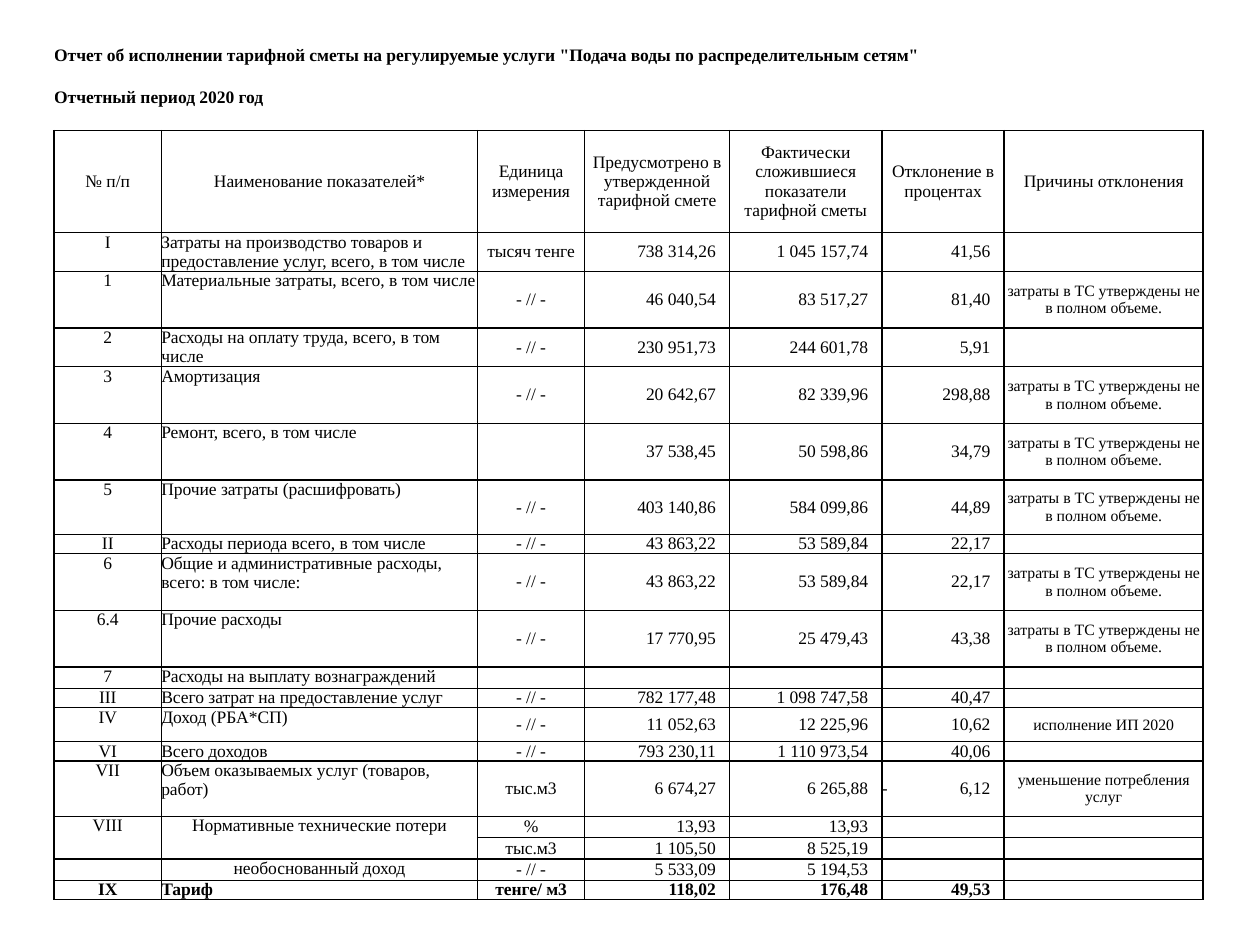
from lxml import etree
from pptx import Presentation
from pptx import util as u
from pptx.dml.color import RGBColor
from pptx.enum import text
from pptx.oxml import ns

BLACK = RGBColor(0x00, 0x00, 0x00)
WHITE = RGBColor(0xFF, 0xFF, 0xFF)
LEFT, MID, RIGHT = text.PP_ALIGN.LEFT, text.PP_ALIGN.CENTER, text.PP_ALIGN.RIGHT

COLS = [0.85, 2.51, 0.85, 1.15, 1.21, 0.97, 1.58]
ROWS = [0.16, 0.16, 0.18, 0.15, 0.81, 0.3, 0.45, 0.3, 0.45, 0.45, 0.43, 0.15,
        0.45, 0.45, 0.15, 0.15, 0.27, 0.15, 0.44, 0.15, 0.15, 0.15, 0.15]
HEAD = 4  # row of the column headings
LOSS = 19  # first of the two rows on losses
FINAL = len(ROWS) - 1

TITLE = 'Отчет об исполнении тарифной сметы на регулируемые услуги "Подача воды по распределительным сетям"'
PERIOD = "Отчетный период 2020 год"
SAME = "- // -"
LOW = "затраты в ТС утверждены не в полном объеме."

DATA = [
    ("№ п/п", "Наименование показателей*", "Единица измерения",
     "Предусмотрено в утвержденной тарифной смете",
     "Фактически сложившиеся показатели тарифной сметы",
     "Отклонение в процентах", "Причины отклонения"),
    ("I", "Затраты на производство товаров и предоставление услуг, всего, в том числе",
     "тысяч тенге", "738 314,26", "1 045 157,74", "41,56", ""),
    ("1", "Материальные затраты, всего, в том числе", SAME, "46 040,54", "83 517,27", "81,40", LOW),
    ("2", "Расходы на оплату труда, всего, в том числе", SAME, "230 951,73", "244 601,78", "5,91", ""),
    ("3", "Амортизация", SAME, "20 642,67", "82 339,96", "298,88", LOW),
    ("4", "Ремонт, всего, в том числе", "", "37 538,45", "50 598,86", "34,79", LOW),
    ("5", "Прочие затраты (расшифровать)", SAME, "403 140,86", "584 099,86", "44,89", LOW),
    ("II", "Расходы периода всего, в том числе", SAME, "43 863,22", "53 589,84", "22,17", ""),
    ("6", "Общие и административные расходы, всего: в том числе:", SAME,
     "43 863,22", "53 589,84", "22,17", LOW),
    ("6.4", "Прочие расходы", SAME, "17 770,95", "25 479,43", "43,38", LOW),
    ("7", "Расходы на выплату вознаграждений", "", "", "", "", ""),
    ("III", "Всего затрат на предоставление услуг", SAME, "782 177,48", "1 098 747,58", "40,47", ""),
    ("IV", "Доход (РБА*СП)", SAME, "11 052,63", "12 225,96", "10,62", "исполнение ИП 2020"),
    ("VI", "Всего доходов", SAME, "793 230,11", "1 110 973,54", "40,06", ""),
    ("VII", "Объем оказываемых услуг (товаров, работ)", "тыс.м3",
     "6 674,27", "6 265,88", "-\t6,12", "уменьшение потребления услуг"),
    ("VIII", "Нормативные технические потери", "%", "13,93", "13,93", "", ""),
    ("", "", "тыс.м3", "1 105,50", "8 525,19", "", ""),
    ("", "необоснованный доход", SAME, "5 533,09", "5 194,53", "", ""),
    ("IX", "Тариф", "тенге/ м3", "118,02", "176,48", "49,53", ""),
]


class Sheet:
    """Style of the report and the slide it is set on."""

    font = "Times New Roman"
    size = 10
    small = 9
    pad = 0.11

    def __init__(self, slide):
        self.slide = slide

    def table(self, left, top, cols, rows):
        frame = self.slide.shapes.add_table(
            len(rows), len(cols), u.Inches(left), u.Inches(top),
            u.Inches(sum(cols)), u.Inches(sum(rows)))
        grid = frame.table
        grid.first_row = grid.horz_banding = False
        for col, width in zip(grid.columns, cols):
            col.width = u.Inches(width)
        for row, height in zip(grid.rows, rows):
            row.height = u.Inches(height)
        return grid

    def edges(self, cell, hues):
        """Draw left, right, top and bottom borders, in that order."""
        props = cell._tc.get_or_add_tcPr()
        for side, hue in zip("LRTB", hues):
            line = etree.SubElement(props, ns.qn("a:ln" + side), w=str(u.Pt(1)))
            fill = etree.SubElement(line, ns.qn("a:solidFill"))
            etree.SubElement(fill, ns.qn("a:srgbClr"), val=str(hue))

    def cell(self, cell, words, hues, align=LEFT, top=False, bold=False, size=size):
        self.edges(cell, hues)
        cell.fill.solid()
        cell.fill.fore_color.rgb = WHITE
        cell.margin_left = cell.margin_right = cell.margin_top = cell.margin_bottom = 0
        cell.vertical_anchor = text.MSO_ANCHOR.TOP if top else text.MSO_ANCHOR.MIDDLE
        para = cell.text_frame.paragraphs[0]
        para.alignment = align
        if not words:
            # keeps empty rows as low as the text rows
            etree.SubElement(para._p, ns.qn("a:endParaRPr"), sz=str(size * 100))
            return
        if align == RIGHT:
            cell.margin_right = u.Inches(self.pad)
        if "\t" in words:
            self.stop(para, COLS[5] - self.pad)
        run = para.add_run()
        run.text = words
        run.font.name = self.font
        run.font.size = u.Pt(size)
        run.font.bold = bold
        run.font.color.rgb = BLACK

    def stop(self, para, place):
        """Set a right tab, with the sign kept at the left edge."""
        para.alignment = LEFT
        tabs = etree.SubElement(para._p.get_or_add_pPr(), ns.qn("a:tabLst"))
        etree.SubElement(tabs, ns.qn("a:tab"), pos=str(u.Inches(place)), algn="r")


def main():
    deck = Presentation()
    deck.slide_width, deck.slide_height = u.Inches(10), u.Inches(7.5)
    sheet = Sheet(deck.slides.add_slide(deck.slide_layouts[6]))
    grid = sheet.table(0.43, 0.36, COLS, ROWS)

    # Title rows, without visible borders
    titles = {(0, 0): TITLE, (2, 0): PERIOD}
    for r in range(HEAD):
        base = BLACK if r == HEAD - 1 else WHITE
        for c in range(len(COLS)):
            sheet.cell(grid.cell(r, c), titles.get((r, c), ""),
                       [WHITE, WHITE, WHITE, base], bold=True)

    # Headings and figures
    for r, row in enumerate(DATA, HEAD):
        for c, words in enumerate(row):
            align = MID
            if r > HEAD and c in (3, 4, 5):
                align = RIGHT
            elif c == 1 and HEAD < r < LOSS or c == 1 and r == FINAL:
                align = LEFT
            sheet.cell(grid.cell(r, c), words, [BLACK] * 4, align,
                       top=c < 2 and HEAD < r < FINAL, bold=r == FINAL,
                       size=sheet.small if c == 6 and r > HEAD else sheet.size)

    # Joined cells
    for r, c, down, over in [(0, 0, 0, 6), (2, 0, 0, 1), (LOSS, 0, 1, 0), (LOSS, 1, 1, 0)]:
        grid.cell(r, c).merge(grid.cell(r + down, c + over))

    deck.save("out.pptx")


if __name__ == "__main__":
    main()
